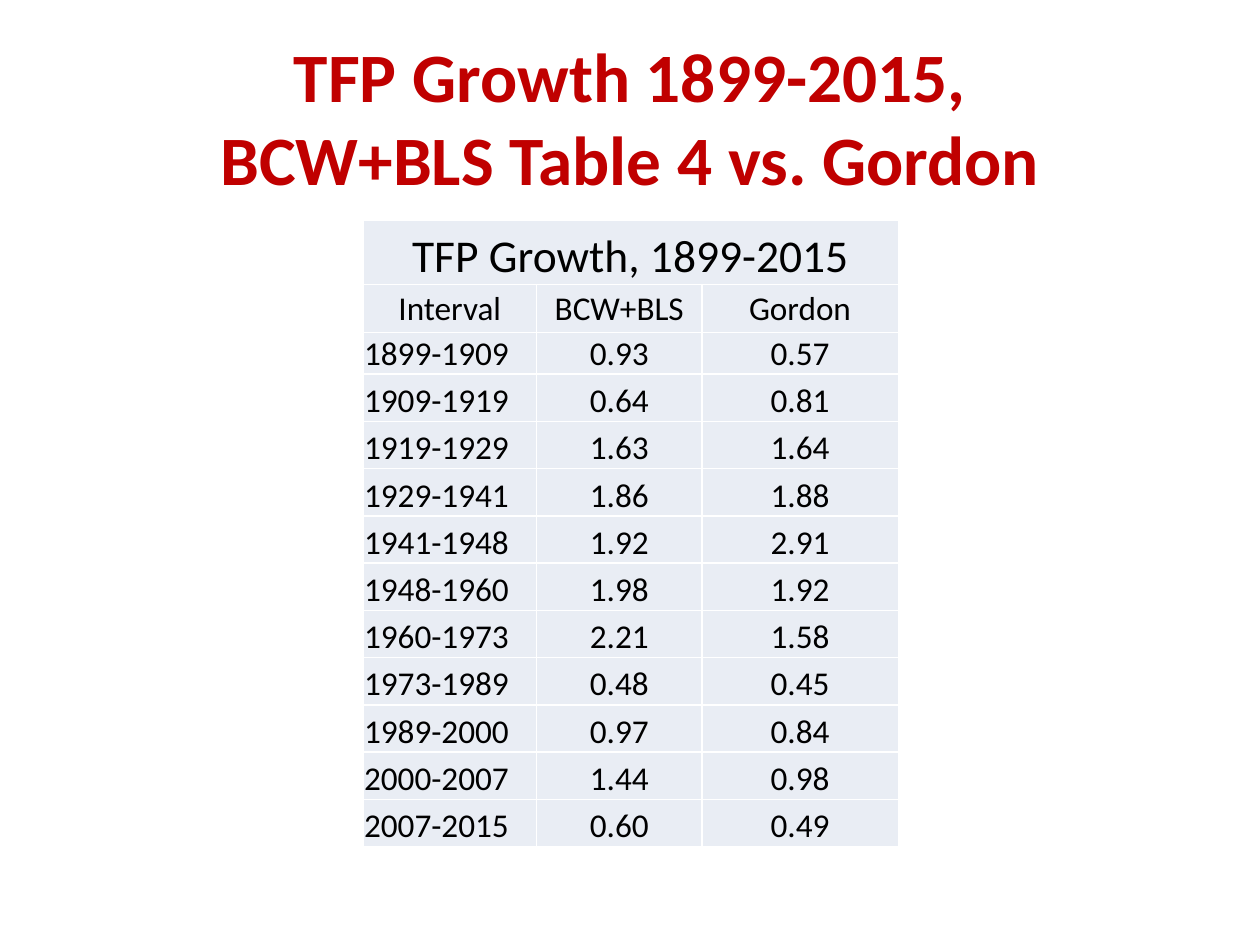
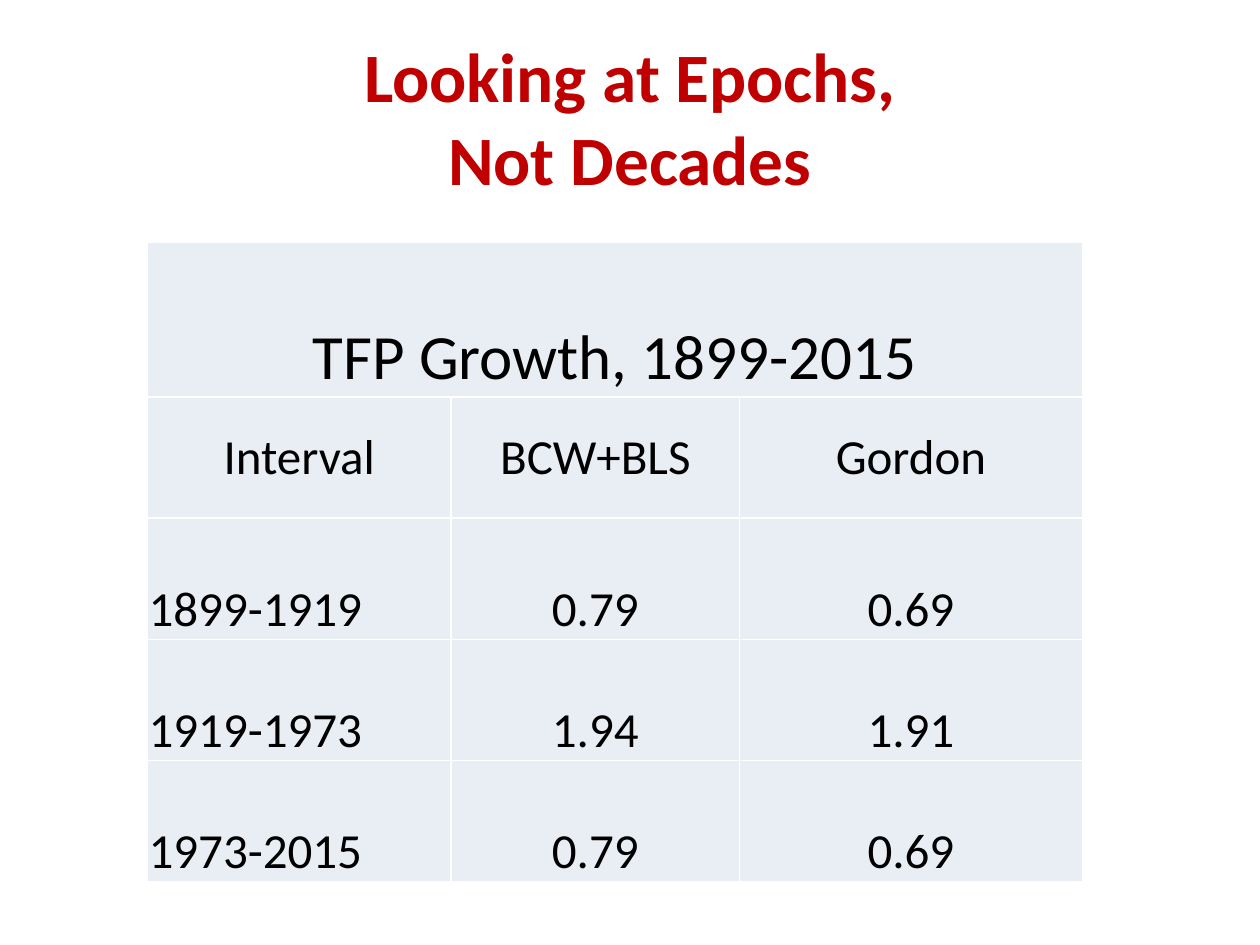
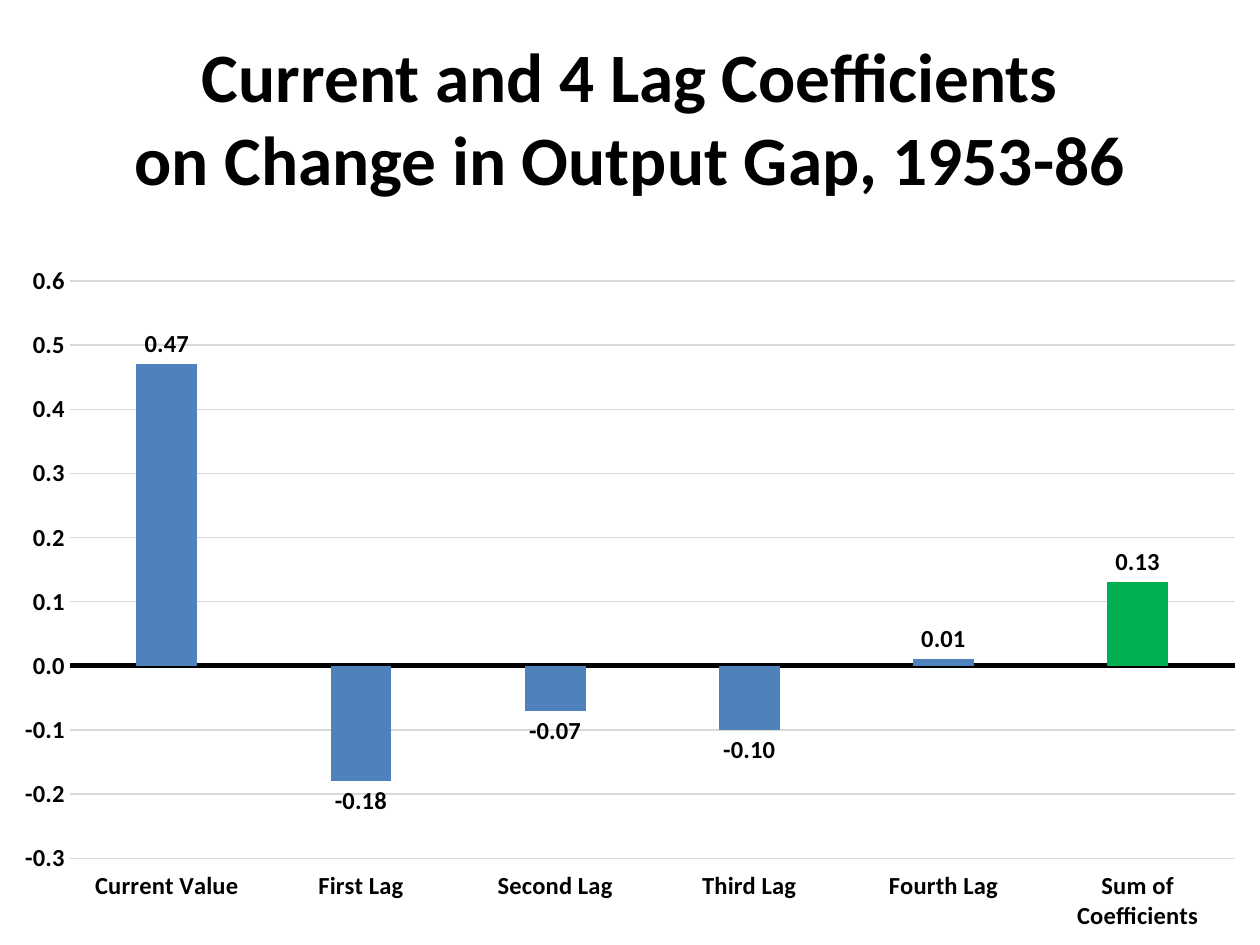
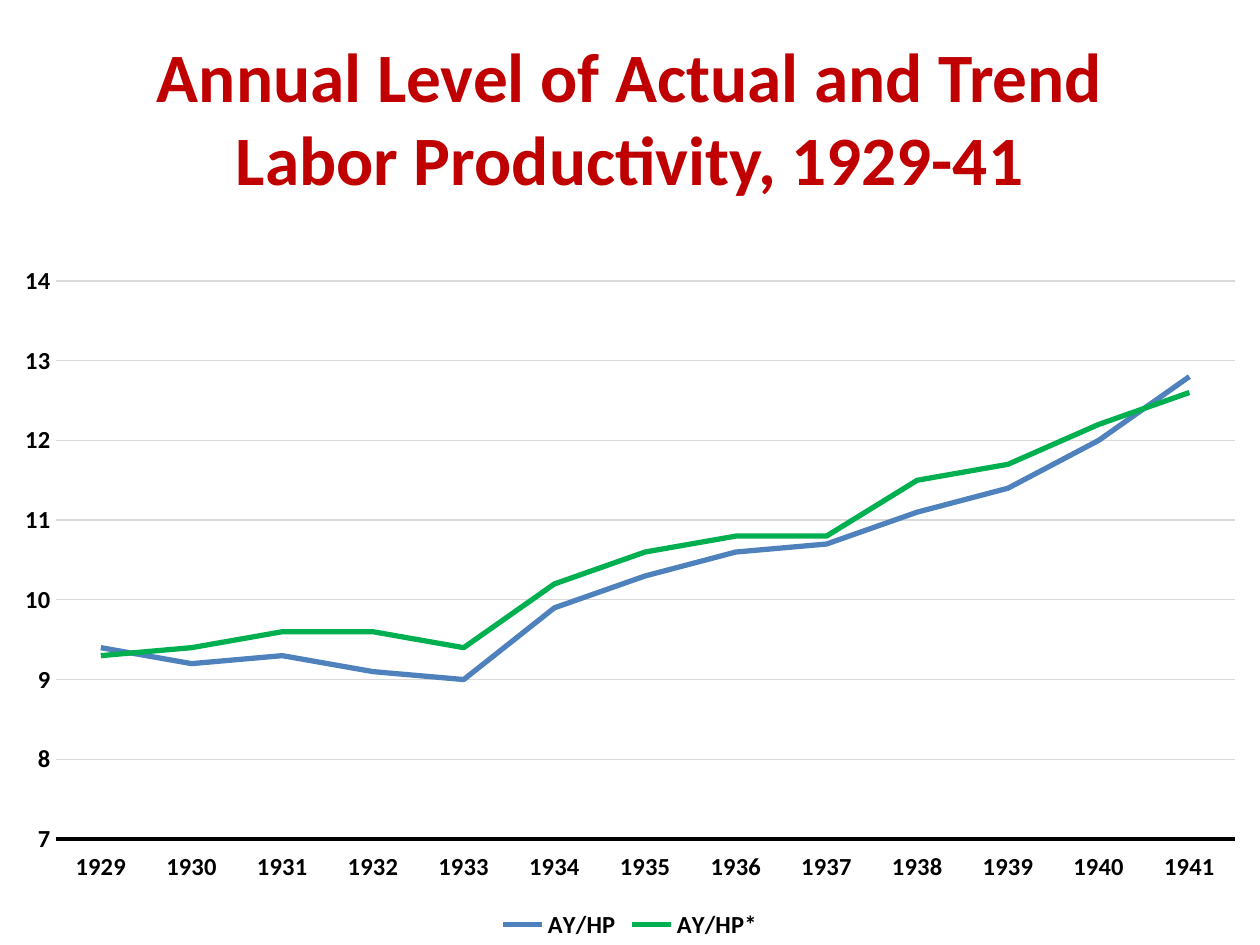
import dataclasses

import pptx
import pptx.chart.data
import pptx.dml.color
import pptx.enum.chart
import pptx.enum.text
import pptx.oxml
import pptx.oxml.ns
import pptx.util
from pptx.util import Inches

XL = pptx.enum.chart
ALIGN = pptx.enum.text.PP_ALIGN
ANCHOR = pptx.enum.text.MSO_ANCHOR
RGB = pptx.dml.color.RGBColor.from_string
Pt = pptx.util.Pt


@dataclasses.dataclass(frozen=True)
class Theme:
    font: str = "Calibri"
    black: str = "000000"
    red: str = "C00000"
    blue: str = "4F81BD"
    green: str = "00B050"
    white: str = "FFFFFF"
    cell: str = "E9EDF4"
    grid: str = "D9D9D9"
    title_size: float = 39.6
    chart_size: float = 14


theme = Theme()


def style_font(font, size, color=theme.black, bold=False):
    font.name = theme.font
    font.size = Pt(size)
    font.bold = bold
    font.color.rgb = RGB(color)


def write(frame, text, align=ALIGN.CENTER, **font_format):
    """Fill a text frame with one paragraph; \\v in the text breaks the line."""
    paragraph = frame.paragraphs[0]
    paragraph.text = text
    paragraph.alignment = align
    for run in paragraph.runs:
        style_font(run.font, **font_format)


deck = pptx.Presentation()
deck.slide_width, deck.slide_height = Inches(10), Inches(7.5)

# Titles
headings = [
    ("TFP Growth 1899-2015,\vBCW+BLS Table 4 vs. Gordon", theme.red),
    ("Looking at Epochs,\vNot Decades", theme.red),
    ("Current and 4 Lag Coefficients\von Change in Output Gap, 1953-86", theme.black),
    ("Annual Level of Actual and Trend\vLabor Productivity, 1929-41", theme.red),
]
slides = []
for heading, color in headings:
    slide = deck.slides.add_slide(deck.slide_layouts[5])
    title = slide.shapes.title
    title.left, title.top = Inches(0.5), Inches(0.3)
    title.width, title.height = Inches(9), Inches(1.25)
    title.text_frame.auto_size = pptx.enum.text.MSO_AUTO_SIZE.NONE
    title.text_frame.vertical_anchor = ANCHOR.MIDDLE
    write(title.text_frame, heading, size=theme.title_size, color=color, bold=True)
    slides.append(slide)
decades_slide, epochs_slide, lags_slide, productivity_slide = slides

# Growth tables: the rows after the fixed ones share the remaining height
decades = [
    ("1899-1909", "0.93", "0.57"),
    ("1909-1919", "0.64", "0.81"),
    ("1919-1929", "1.63", "1.64"),
    ("1929-1941", "1.86", "1.88"),
    ("1941-1948", "1.92", "2.91"),
    ("1948-1960", "1.98", "1.92"),
    ("1960-1973", "2.21", "1.58"),
    ("1973-1989", "0.48", "0.45"),
    ("1989-2000", "0.97", "0.84"),
    ("2000-2007", "1.44", "0.98"),
    ("2007-2015", "0.60", "0.49"),
]
epochs = [
    ("1899-1919", "0.79", "0.69"),
    ("1919-1973", "1.94", "1.91"),
    ("1973-2015", "0.79", "0.69"),
]
growth_tables = [
    (decades_slide, decades, (2.88, 1.75), (1.38, 1.31, 1.56), 4.96,
     (0.51, 0.38, 0.32), 26, 19),
    (epochs_slide, epochs, (1.17, 1.92), (2.41, 2.29, 2.72), 5.08,
     (1.23,), 36, 28),
]
for slide, intervals, (left, top), widths, height, fixed, caption_size, size in growth_tables:
    rows = [("TFP Growth, 1899-2015", "", ""), ("Interval", "BCW+BLS", "Gordon"), *intervals]
    table = slide.shapes.add_table(
        len(rows), len(widths), Inches(left), Inches(top),
        Inches(sum(widths)), Inches(height)).table
    table.first_row = table.horz_banding = False
    for column, width in zip(table.columns, widths):
        column.width = Inches(width)
    even_height = (height - sum(fixed)) / (len(rows) - len(fixed))
    for r, values in enumerate(rows):
        table.rows[r].height = Inches(fixed[r] if r < len(fixed) else even_height)
        for c, value in enumerate(values):
            cell = table.cell(r, c)
            cell.margin_left = cell.margin_right = cell.margin_top = Inches(0.01)
            cell.margin_bottom = 0
            cell.vertical_anchor = ANCHOR.MIDDLE if r == 1 else ANCHOR.BOTTOM
            cell.fill.solid()
            cell.fill.fore_color.rgb = RGB(theme.cell)
            write(cell.text_frame, value,
                  align=ALIGN.LEFT if r > 1 and c == 0 else ALIGN.CENTER,
                  size=caption_size if r == 0 else size)
            for position, side in enumerate(("lnL", "lnR", "lnT", "lnB")):
                cell._tc.get_or_add_tcPr().insert(position, pptx.oxml.parse_xml(
                    f'<a:{side} {pptx.oxml.ns.nsdecls("a")} w="12700"><a:solidFill>'
                    f'<a:srgbClr val="{theme.white}"/></a:solidFill></a:{side}>'))
    table.cell(0, 0).merge(table.cell(0, len(widths) - 1))

# Charts
lags = pptx.chart.data.CategoryChartData()
lags.categories = ["Current Value", "First Lag", "Second Lag", "Third Lag",
                   "Fourth Lag", "Sum of Coefficients"]
lags.add_series("Series 1", [0.47, -0.18, -0.07, -0.1, 0.01, 0.13])

productivity = pptx.chart.data.CategoryChartData()
productivity.categories = [str(year) for year in range(1929, 1942)]
productivity.add_series(
    "AY/HP", [9.4, 9.2, 9.3, 9.1, 9, 9.9, 10.3, 10.6, 10.7, 11.1, 11.4, 12, 12.8])
productivity.add_series(
    "AY/HP*", [9.3, 9.4, 9.6, 9.6, 9.4, 10.2, 10.6, 10.8, 10.8, 11.5, 11.7, 12.2, 12.6])

chart_plans = [
    (lags_slide, lags, XL.XL_CHART_TYPE.COLUMN_CLUSTERED, (-0.3, 0.6, 0.1), "0.0", 3),
    (productivity_slide, productivity, XL.XL_CHART_TYPE.LINE, (7, 14, 1), "0", 2),
]
charts = []
for slide, data, kind, (low, high, step), number_format, baseline in chart_plans:
    chart = slide.shapes.add_chart(
        kind, 0, Inches(2), Inches(10), Inches(5.5), data).chart
    chart.has_title = False
    chart.has_legend = False
    style_font(chart.font, theme.chart_size, bold=True)
    chart.plots[0].vary_by_categories = False
    for axis in (chart.category_axis, chart.value_axis):
        axis.major_tick_mark = axis.minor_tick_mark = XL.XL_TICK_MARK.NONE
        style_font(axis.tick_labels.font, theme.chart_size, bold=True)
    chart.category_axis.tick_label_position = XL.XL_TICK_LABEL_POSITION.LOW
    axis_line = chart.category_axis.format.line
    axis_line.color.rgb = RGB(theme.black)
    axis_line.width = Pt(baseline)
    values = chart.value_axis
    values.minimum_scale, values.maximum_scale, values.major_unit = low, high, step
    values.tick_labels.number_format = number_format
    values.tick_labels.number_format_is_linked = False
    values.format.line.fill.background()
    values.has_major_gridlines = True
    values.major_gridlines.format.line.color.rgb = RGB(theme.grid)
    values.major_gridlines.format.line.width = Pt(0.75)
    charts.append(chart)
lag_chart, productivity_chart = charts

lag_plot = lag_chart.plots[0]
lag_plot.gap_width, lag_plot.overlap = 219, -27
coefficients = lag_plot.series[0]
coefficients.invert_if_negative = False
for bar, color in ((coefficients, theme.blue), (coefficients.points[5], theme.green)):
    bar.format.fill.solid()
    bar.format.fill.fore_color.rgb = RGB(color)
labels = coefficients.data_labels
labels.show_value = True
labels.number_format = "0.00"
labels.number_format_is_linked = False
labels.position = XL.XL_LABEL_POSITION.OUTSIDE_END
style_font(labels.font, theme.chart_size, bold=True)

for level, color in zip(productivity_chart.plots[0].series, (theme.blue, theme.green)):
    level.smooth = False
    level.marker.style = XL.XL_MARKER_STYLE.NONE
    level.format.line.color.rgb = RGB(color)
    level.format.line.width = Pt(3)
productivity_chart.has_legend = True
legend = productivity_chart.legend
legend.position = XL.XL_LEGEND_POSITION.BOTTOM
legend.include_in_layout = False
style_font(legend.font, theme.chart_size, bold=True)

deck.save("out.pptx")
